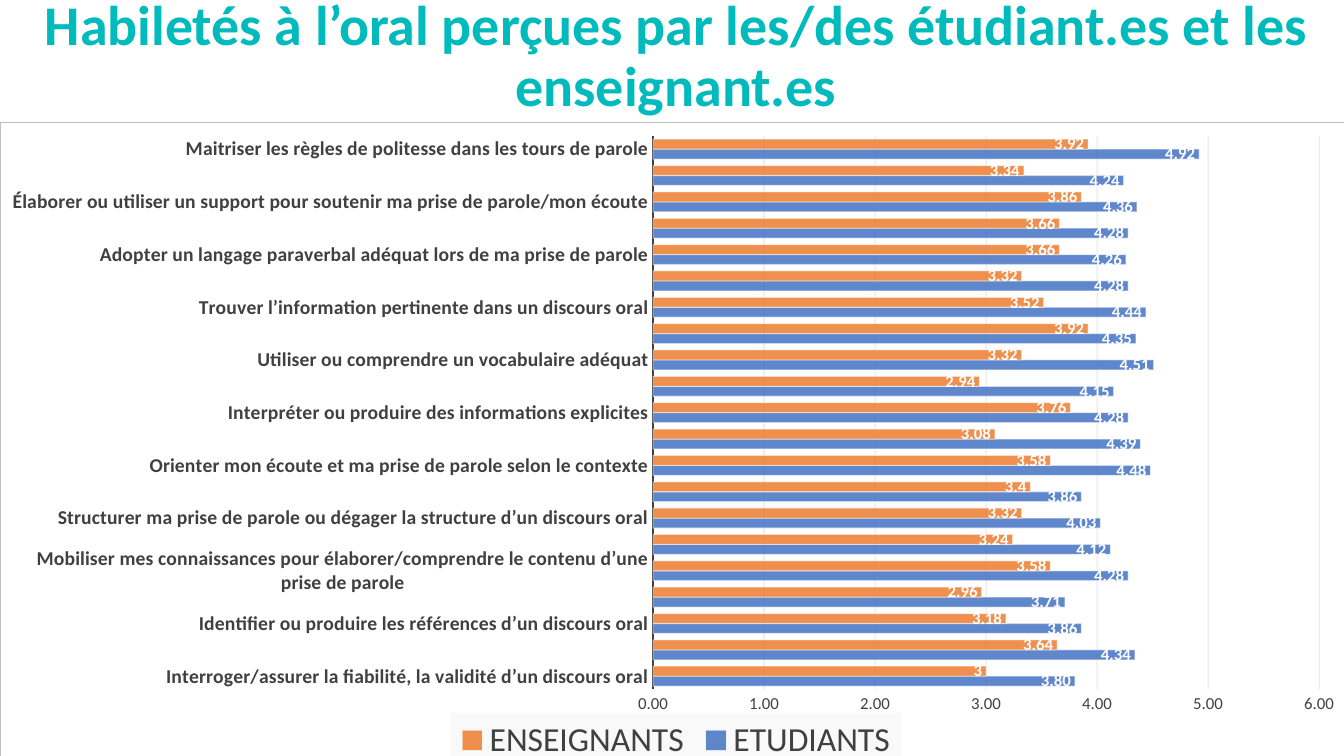
from lxml import etree
from pptx import Presentation
from pptx.chart.data import CategoryChartData
from pptx.dml.color import RGBColor
from pptx.enum.chart import XL_CHART_TYPE, XL_LABEL_POSITION, XL_LEGEND_POSITION, XL_TICK_MARK
from pptx.enum.text import MSO_ANCHOR, PP_ALIGN
from pptx.oxml import parse_xml
from pptx.oxml.ns import nsdecls, qn
from pptx.util import Inches, Pt

BARS = XL_CHART_TYPE.BAR_CLUSTERED
INSIDE = XL_LABEL_POSITION.INSIDE_END
BOTTOM = XL_LEGEND_POSITION.BOTTOM
NONE = XL_TICK_MARK.NONE
MIDDLE = MSO_ANCHOR.MIDDLE
CENTER = PP_ALIGN.CENTER
FACE = "Calibri"
WIDE, HIGH = 13.33, 7.5
SPAN = 13.41
HUES = {
    "title": "00BABC", "ink": "404040", "black": "000000", "grid": "0D0D0D",
    "white": "FFFFFF", "edge": "BFBFBF", "key": "F2F2F2",
    "blue": "4472C4", "orange": "ED7D31",
}

ROWS = [
    ("Interroger/assurer la fiabilité, la validité d’un discours oral", 3.8, 3),
    ("", 4.34, 3.64),
    ("Identifier ou produire les références d’un discours oral", 3.86, 3.18),
    ("", 3.71, 2.96),
    ("Mobiliser mes connaissances pour élaborer/comprendre le contenu d’une prise de parole", 4.28, 3.58),
    ("", 4.12, 3.24),
    ("Structurer ma prise de parole ou dégager la structure d’un discours oral", 4.03, 3.32),
    ("", 3.86, 3.4),
    ("Orienter mon écoute et ma prise de parole selon le contexte", 4.48, 3.58),
    ("", 4.39, 3.08),
    ("Interpréter ou produire des informations explicites", 4.28, 3.76),
    ("", 4.15, 2.94),
    ("Utiliser ou comprendre un vocabulaire adéquat", 4.51, 3.32),
    ("", 4.35, 3.92),
    ("Trouver l’information pertinente dans un discours oral", 4.44, 3.52),
    ("", 4.28, 3.32),
    ("Adopter un langage paraverbal adéquat lors de ma prise de parole", 4.26, 3.66),
    ("", 4.28, 3.66),
    ("Élaborer ou utiliser un support pour soutenir ma prise de parole/mon écoute", 4.36, 3.86),
    ("", 4.24, 3.34),
    ("Maitriser les règles de politesse dans les tours de parole", 4.92, 3.92),
]
NAMES, PUPILS, STAFF = zip(*ROWS)


def style(font, size, hue, bold=False):
    font.name, font.size, font.bold = FACE, Pt(size), bold
    font.color.rgb = RGBColor.from_string(HUES[hue])


def fade(root, hue, share):
    for node in root.iter(qn("a:srgbClr")):
        if node.get("val") == HUES[hue]:
            etree.SubElement(node, qn("a:alpha")).set("val", str(share * 1000))


deck = Presentation()
deck.slide_width, deck.slide_height = Inches(WIDE), Inches(HIGH)
slide = deck.slides.add_slide(deck.slide_layouts[6])

head = slide.shapes.add_textbox(0, Inches(0.21), Inches(SPAN), Inches(0.73)).text_frame
head.word_wrap = True
head.vertical_anchor = MIDDLE
line = head.paragraphs[0]
line.text = "Habiletés à l’oral perçues par les/des étudiant.es et les enseignant.es"
line.alignment = CENTER
line.line_spacing = 0.9
style(line.font, 40, "title", True)

data = CategoryChartData()
data.categories = NAMES
data.add_series("ETUDIANTS", PUPILS)
data.add_series("ENSEIGNANTS", STAFF)
chart = slide.shapes.add_chart(BARS, 0, Inches(1.21), Inches(SPAN), Inches(6.41), data).chart
chart.has_title = False
style(chart.font, 10, "black")

plot = chart.plots[0]
plot.gap_width = 65
plot.overlap = 0
plot.vary_by_categories = False
for bars, hue in zip(plot.series, ("blue", "orange")):
    shape = bars.format
    shape.fill.solid()
    shape.fill.fore_color.rgb = RGBColor.from_string(HUES[hue])
    shape.line.color.rgb = RGBColor.from_string(HUES["white"])
    shape.line.width = Pt(0.75)
    fade(chart.element, hue, 85)
fade(chart.element, "white", 50)
for bars, mask in zip(plot.series, ("0.00", "General")):
    tags = bars.data_labels
    tags.show_value = True
    tags.position = INSIDE
    tags.number_format = mask
    tags.number_format_is_linked = False
    style(tags.font, 12, "white", True)

names = chart.category_axis
names.major_tick_mark = names.minor_tick_mark = NONE
names.format.line.color.rgb = RGBColor.from_string(HUES["ink"])
names.format.line.width = Pt(1.5)
style(names.tick_labels.font, 14, "ink", True)

scale = chart.value_axis
scale.minimum_scale, scale.maximum_scale, scale.major_unit = 0, 6, 1
scale.major_tick_mark = scale.minor_tick_mark = NONE
scale.format.line.fill.background()
scale.tick_labels.number_format = "0.00"
scale.tick_labels.number_format_is_linked = False
style(scale.tick_labels.font, 12, "ink")
grid = scale.major_gridlines.format.line
grid.color.rgb = RGBColor.from_string(HUES["grid"])
grid.width = Pt(0.75)
fade(chart.element, "grid", 10)

chart.has_legend = True
chart.legend.position = BOTTOM
chart.legend.include_in_layout = False
style(chart.legend.font, 24, "ink")

key = chart.element.find(".//" + qn("c:legend"))
edge = f'<a:ln w="9525"><a:solidFill><a:srgbClr val="{HUES["edge"]}"/></a:solidFill></a:ln>'
for root, hue, rim in ((key, "key", "<a:ln><a:noFill/></a:ln>"), (chart.element, "white", edge)):
    look = parse_xml(
        f'<c:spPr {nsdecls("c", "a")}><a:solidFill><a:srgbClr val="{HUES[hue]}"/></a:solidFill>{rim}</c:spPr>')
    root.find(qn("c:txPr")).addprevious(look)
fade(key, "key", 40)

area = chart.element.find(".//" + qn("c:plotArea"))
for old in area.findall(qn("c:layout")):
    area.remove(old)
frame = etree.Element(qn("c:layout"))
inner = etree.SubElement(frame, qn("c:manualLayout"))
for tag, val in (("layoutTarget", "inner"), ("xMode", "edge"), ("yMode", "edge"),
                 ("x", 48.3 / 100), ("y", 2.1 / 100), ("w", 49.3 / 100), ("h", 85.8 / 100)):
    etree.SubElement(inner, qn("c:" + tag)).set("val", str(val))
area.insert(0, frame)

deck.save("out.pptx")
